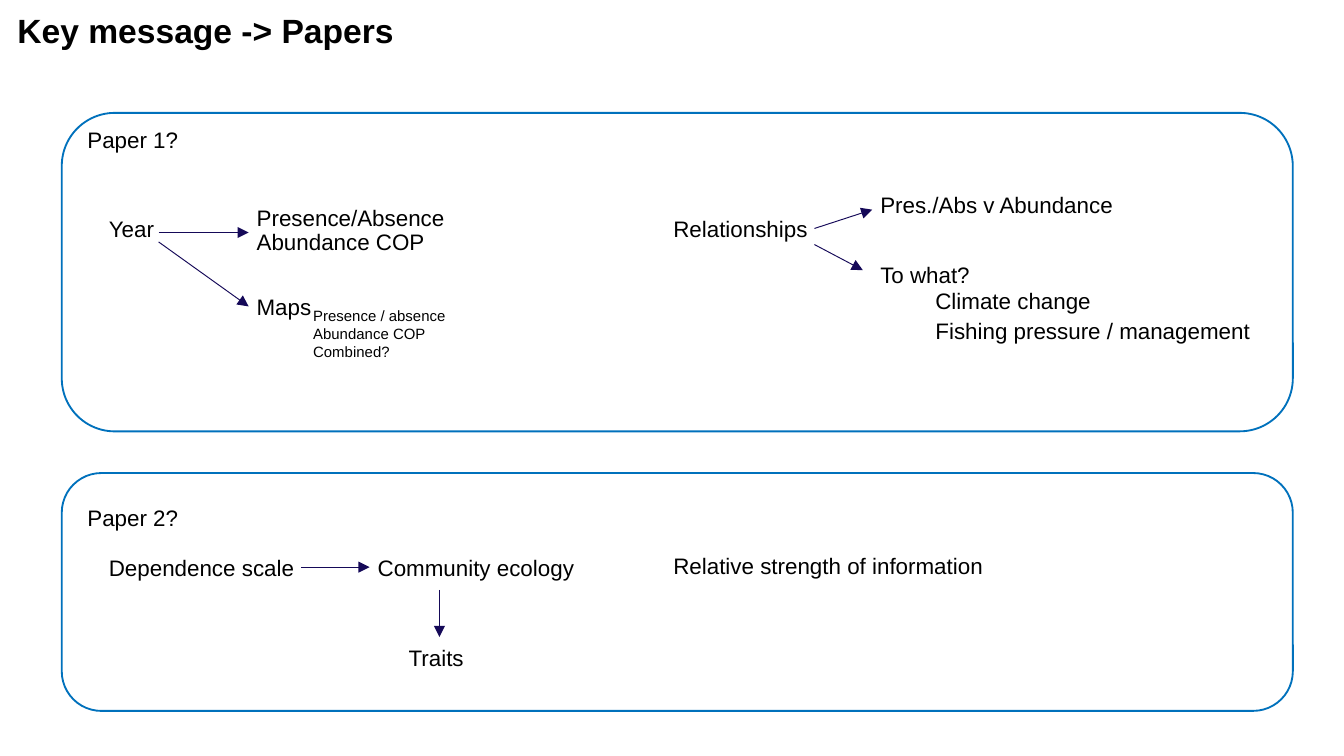
from lxml.etree import SubElement
from pptx import Presentation
from pptx.dml.color import RGBColor
from pptx.enum.shapes import MSO_CONNECTOR as Connector, MSO_SHAPE as Shape
from pptx.enum.text import MSO_ANCHOR as Anchor, MSO_AUTO_SIZE as AutoSize, PP_ALIGN as Align
from pptx.oxml.ns import qn
from pptx.util import Inches, Pt

WIDTH = 10
HEIGHT = WIDTH * 9 / 16
BLACK, NAVY, BLUE = "000000", "150958", "0071BC"
LINE_HEIGHT = 0.2

# Left edges of the text columns, in inches
COLUMNS = {"label": 0.65, "start": 0.81, "result": 1.91, "detail": 2.33,
           "traits": 3.04, "right": 5.01, "branch": 6.55, "factor": 6.96}

# Column, top, width, lines, size
TEXTS = [
    ("start", 1.6, 0.45, ["Year"], 12),
    ("result", 1.7, 1.43, ["Abundance COP"], 12),
    ("result", 1.52, 1.69, ["Presence/Absence"], 12),
    ("result", 2.18, 0.56, ["Maps"], 12),
    ("detail", 2.28, 1.43, ["Presence / absence", "Abundance COP", "Combined?"], 8),
    ("right", 1.6, 1.69, ["Relationships"], 12),
    ("branch", 1.42, 1.96, ["Pres./Abs v Abundance"], 12),
    ("branch", 1.94, 1.96, ["To what?"], 12),
    ("factor", 2.14, 1.96, ["Climate change"], 12),
    ("factor", 2.36, 2.35, ["Fishing pressure / management"], 12),
    ("start", 4.12, 3.85, ["Dependence scale\t\tCommunity ecology"], 12),
    ("traits", 4.79, 0.65, ["Traits"], 12),
    ("right", 4.11, 3.85, ["Relative strength of information"], 12),
    ("label", 0.94, 2.32, ["Paper 1?"], 12),
    ("label", 3.75, 2.32, ["Paper 2?"], 12),
]

# Start and end points
ARROWS = [
    ((1.18, 1.73), (1.85, 1.73)),
    ((1.18, 1.8), (1.85, 2.28)),
    ((6.06, 1.7), (6.49, 1.56)),
    ((6.06, 1.82), (6.42, 2.01)),
    ((2.24, 4.22), (2.75, 4.22)),
    ((3.27, 4.39), (3.27, 4.74)),
]

# Top and height of each paper's frame
FRAMES = [(0.84, 2.37), (3.52, 1.77)]


def color(value):
    return RGBColor.from_string(value)


def set_attributes(target, values):
    for name, value in values.items():
        setattr(target, name, value)


def format_frame(frame):
    set_attributes(frame, {"margin_left": 0, "margin_top": 0, "margin_right": 0,
                           "margin_bottom": 0, "word_wrap": True,
                           "vertical_anchor": Anchor.TOP})


def format_paragraph(paragraph, size, bold=False):
    paragraph.alignment = Align.LEFT
    for run in paragraph.runs:
        set_attributes(run.font, {"name": "Arial", "size": Pt(size), "bold": bold})
        run.font.color.rgb = color(BLACK)


def add_tab_stops(paragraph, stops):
    tab_list = SubElement(paragraph._p.get_or_add_pPr(), qn("a:tabLst"))
    for stop in stops:
        SubElement(tab_list, qn("a:tab"), pos=str(Inches(stop)), algn="l")


def fill_title(slide, text):
    title = slide.shapes.title
    set_attributes(title, {"left": Inches(0.13), "top": Inches(0.11),
                           "width": Inches(9.75), "height": Inches(0.53)})
    title.text_frame.text = text
    format_frame(title.text_frame)
    title.text_frame.auto_size = AutoSize.NONE
    paragraph = title.text_frame.paragraphs[0]
    format_paragraph(paragraph, 18, bold=True)
    paragraph.line_spacing = 0.9


def add_text(slide, column, top, width, lines, size):
    height = LINE_HEIGHT * size / 12 * len(lines)
    box = slide.shapes.add_textbox(Inches(COLUMNS[column]), Inches(top),
                                   Inches(width), Inches(height))
    frame = box.text_frame
    format_frame(frame)
    frame.auto_size = AutoSize.SHAPE_TO_FIT_TEXT
    frame.text = "\n".join(lines)
    for paragraph in frame.paragraphs:
        format_paragraph(paragraph, size)
        if "\t" in paragraph.text:
            add_tab_stops(paragraph, (1.5, 2))


def add_arrow(slide, start, end):
    points = [Inches(value) for value in (*start, *end)]
    arrow = slide.shapes.add_connector(Connector.STRAIGHT, *points)
    arrow.line.color.rgb = color(NAVY)
    arrow.line.width = Pt(0.5)
    SubElement(arrow.line._get_or_add_ln(), qn("a:tailEnd"), type="triangle")
    SubElement(arrow._element.spPr, qn("a:effectLst"))


def add_frame(slide, top, height):
    shape = slide.shapes.add_shape(Shape.ROUNDED_RECTANGLE, Inches(0.46), Inches(top),
                                   Inches(9.16), Inches(height))
    shape.shadow.inherit = False
    shape.fill.background()
    shape.line.color.rgb = color(BLUE)
    shape.line.width = Pt(1)


def main():
    presentation = Presentation()
    presentation.slide_width = Inches(WIDTH)
    presentation.slide_height = Inches(HEIGHT)
    slide = presentation.slides.add_slide(presentation.slide_layouts[5])

    fill_title(slide, "Key message -> Papers")
    for text in TEXTS:
        add_text(slide, *text)
    for start, end in ARROWS:
        add_arrow(slide, start, end)
    for top, height in FRAMES:
        add_frame(slide, top, height)

    presentation.save("out.pptx")


if __name__ == "__main__":
    main()
